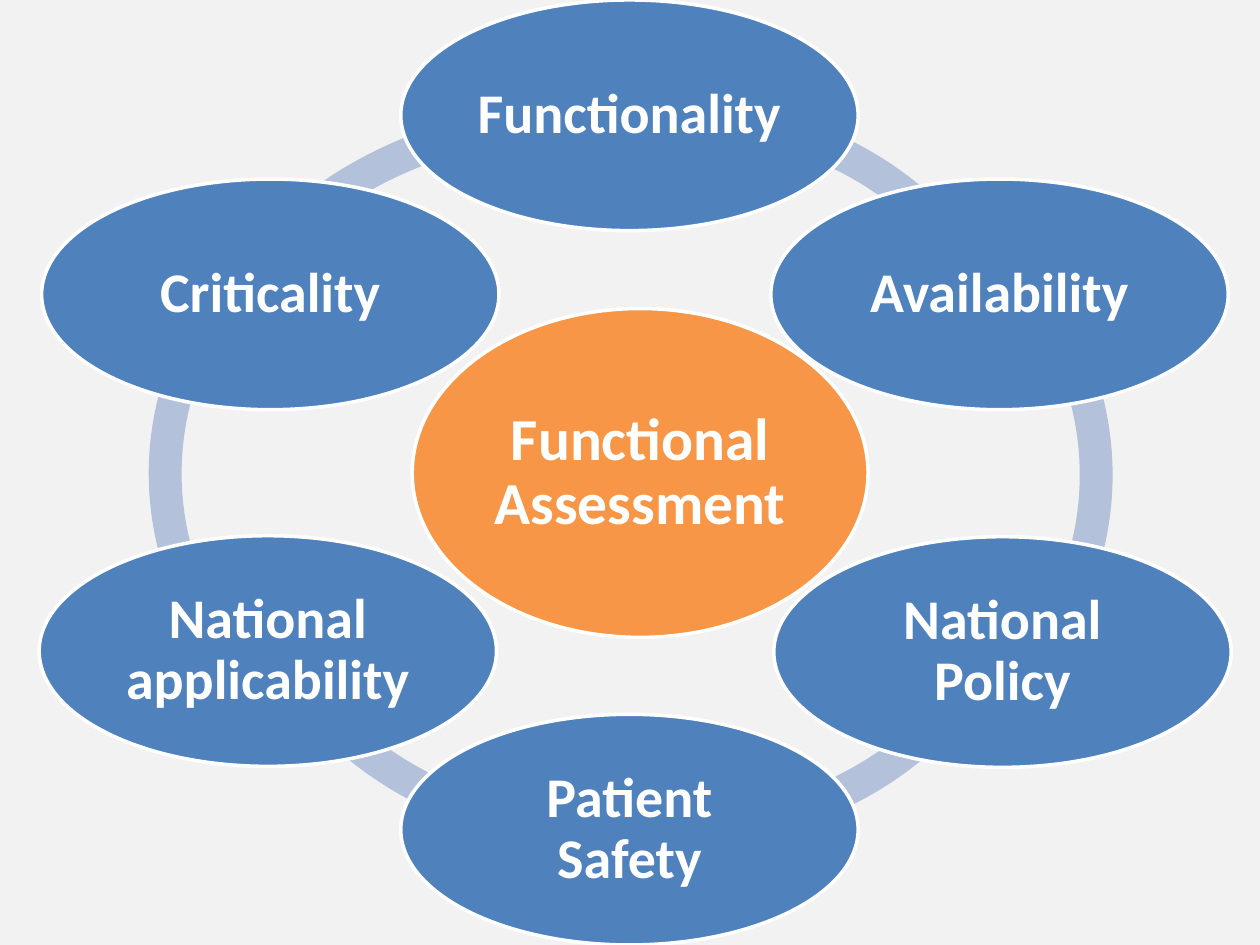
from dataclasses import dataclass

from pptx import Presentation
from pptx.dml.color import RGBColor
from pptx.enum.shapes import MSO_SHAPE
from pptx.enum.text import MSO_ANCHOR, PP_ALIGN
from pptx.util import Cm, Pt

OVAL, BLOCK_ARC = MSO_SHAPE.OVAL, MSO_SHAPE.BLOCK_ARC
MIDDLE, CENTER = MSO_ANCHOR.MIDDLE, PP_ALIGN.CENTER

COLORS = {
    "background": "F2F2F2",
    "ring": "B3C1DB",
    "hub": "F79646",
    "criterion": "4F81BD",
    "white": "FFFFFF",
}
ANGLE_UNIT = 0.6  # adjustment value of one degree
RING_THICKNESS = 0.045
RING_HEIGHT = 14.73
CRITERION_WIDTH, CRITERION_HEIGHT = 9.22, 4.65


@dataclass(frozen=True)
class RingArc:
    left: float
    top: float
    width: float
    start_degrees: float
    end_degrees: float


@dataclass(frozen=True)
class Bubble:
    label: str
    left: float
    top: float
    width: float = CRITERION_WIDTH
    height: float = CRITERION_HEIGHT
    color: str = "criterion"
    font_size: int = 32
    inset: float = 0.1


RING = [
    RingArc(3.28, 2.08, 16.94, 209.4, 277.72),
    RingArc(3.0, 2.18, 17.35, 150.48, 210.36),
    RingArc(4.32, 2.24, 14.73, 81.94, 150.77),
    RingArc(6.55, 2.26, 14.73, 29.06, 99.69),
    RingArc(5.49, 2.21, 16.94, 329.58, 29.58),
    RingArc(6.5, 2.06, 14.73, 260.71, 330.87),
]

HUB = Bubble("Functional Assessment", 8.31, 6.22, 9.19, 6.63, "hub", 34, 0.13)

CRITERIA = [
    Bubble("Functionality", 8.08, 0),
    Bubble("Availability", 15.54, 3.61),
    Bubble("National Policy", 15.6, 10.82),
    Bubble("Patient Safety", 8.08, 14.4),
    Bubble("National applicability", 0.79, 10.8),
    Bubble("Criticality", 0.84, 3.61),
]


def rgb(name: str) -> RGBColor:
    return RGBColor.from_string(COLORS[name])


def set_format(target, values: dict) -> None:
    for attribute, value in values.items():
        setattr(target, attribute, value)


def draw_ring_arc(slide, arc: RingArc) -> None:
    segment = slide.shapes.add_shape(
        BLOCK_ARC, Cm(arc.left), Cm(arc.top), Cm(arc.width), Cm(RING_HEIGHT)
    )
    segment.shadow.inherit = False
    segment.adjustments[0] = arc.start_degrees * ANGLE_UNIT
    segment.adjustments[1] = arc.end_degrees * ANGLE_UNIT
    segment.adjustments[2] = RING_THICKNESS
    segment.fill.solid()
    segment.fill.fore_color.rgb = rgb("ring")
    segment.line.fill.background()


def draw_bubble(slide, bubble: Bubble) -> None:
    oval = slide.shapes.add_shape(
        OVAL, Cm(bubble.left), Cm(bubble.top), Cm(bubble.width), Cm(bubble.height)
    )
    oval.shadow.inherit = False
    oval.fill.solid()
    oval.fill.fore_color.rgb = rgb(bubble.color)
    oval.line.color.rgb = rgb("white")
    oval.line.width = Pt(2)

    frame = oval.text_frame
    inset = Cm(bubble.inset)
    set_format(frame, {
        "word_wrap": True,
        "vertical_anchor": MIDDLE,
        "margin_left": inset,
        "margin_top": inset,
        "margin_right": inset,
        "margin_bottom": inset,
    })
    label = frame.paragraphs[0]
    set_format(label, {"alignment": CENTER, "line_spacing": 0.9})
    run = label.add_run()
    run.text = bubble.label
    set_format(run.font, {"name": "Calibri", "size": Pt(bubble.font_size), "bold": True})
    run.font.color.rgb = rgb("white")


def main() -> None:
    presentation = Presentation()
    presentation.slide_width, presentation.slide_height = Cm(25.4), Cm(19.05)
    slide = presentation.slides.add_slide(presentation.slide_layouts[6])
    slide.background.fill.solid()
    slide.background.fill.fore_color.rgb = rgb("background")

    for arc in RING:
        draw_ring_arc(slide, arc)
    for bubble in [HUB, *CRITERIA]:
        draw_bubble(slide, bubble)

    presentation.save("out.pptx")


if __name__ == "__main__":
    main()
